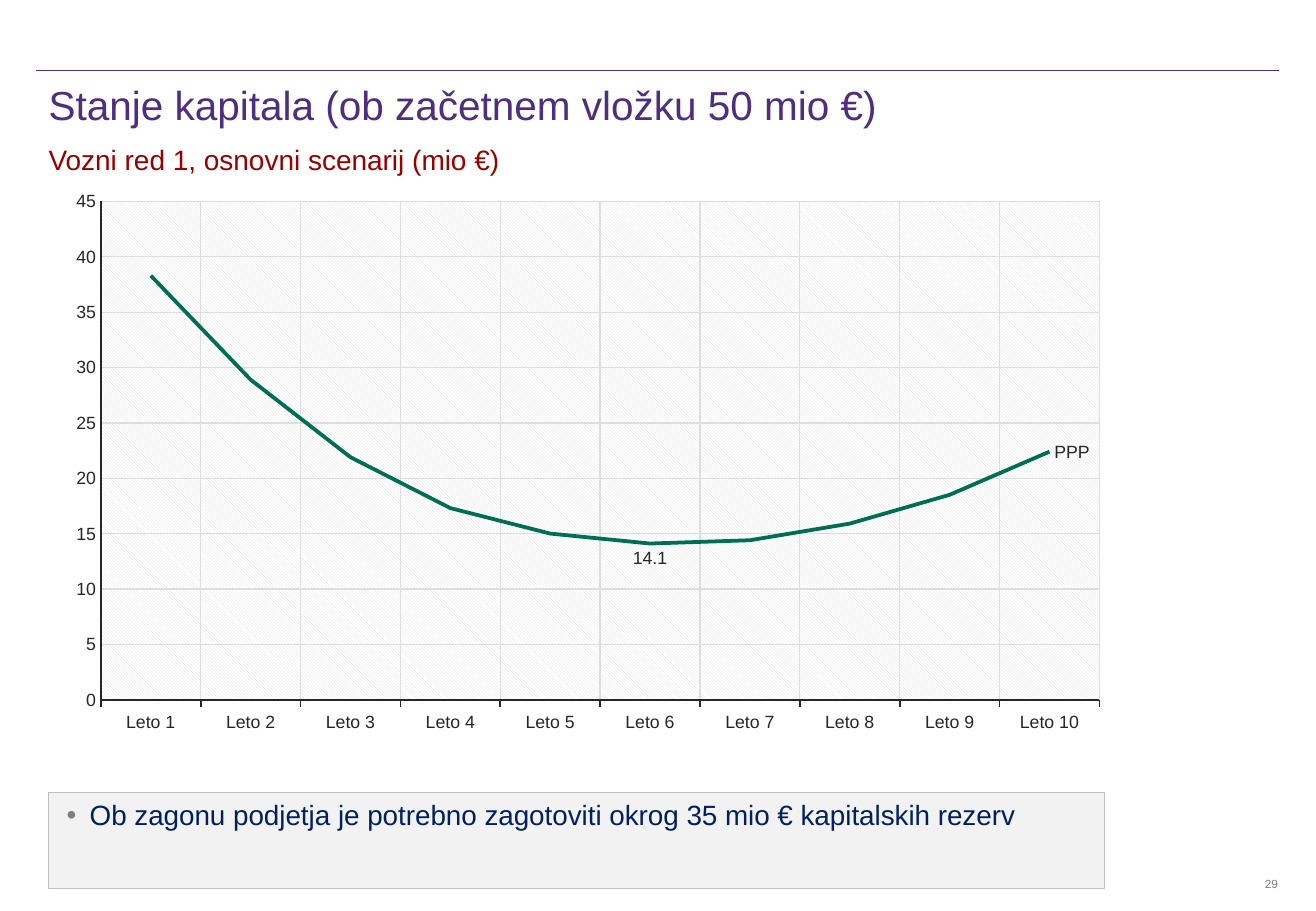
from typing import NamedTuple

from pptx import Presentation
from pptx.chart.axis import _BaseAxis as Axis
from pptx.chart.chart import Chart
from pptx.chart.data import CategoryChartData
from pptx.dml.color import RGBColor
from pptx.dml.line import LineFormat
from pptx.enum.chart import XL_CHART_TYPE as ChartType
from pptx.enum.chart import XL_LABEL_POSITION as LabelPosition
from pptx.enum.chart import XL_TICK_MARK as TickMark
from pptx.enum.shapes import MSO_CONNECTOR as Connector
from pptx.enum.shapes import MSO_SHAPE as Shape
from pptx.enum.text import MSO_ANCHOR as Anchor
from pptx.enum.text import PP_ALIGN as Align
from pptx.oxml import parse_xml
from pptx.oxml.ns import nsdecls, qn
from pptx.slide import Slide
from pptx.text.text import TextFrame, _Paragraph as Paragraph
from pptx.util import Length, Pt

FONT = "Arial"
PURPLE = "4F2D7F"
INK = "262626"
GRID = "DEDEDE"
CAPITAL = [38.3, 28.9, 21.9, 17.3, 15.0, 14.1, 14.4, 15.9, 18.5, 22.4]


class Box(NamedTuple):
    left: float
    top: float
    width: float
    height: float

    def lengths(self) -> list[Length]:
        return [Pt(value) for value in self]


class TextItem(NamedTuple):
    box: Box
    text: str
    size: float
    color: str
    align: Align
    wrap: bool


TITLE_BOX = Box(21.6, 49, 737.3, 28.8)
CHART_BOX = Box(21.6, 113, 636.5, 321.1)
NOTE_BOX = Box(28.8, 469.4, 625.7, 56.9)
PLOT_BOX = Box(0.06, 0.02, 0.93, 0.92)
TEXT_ITEMS = [
    TextItem(Box(28.8, 84.2, 484.6, 20), "Vozni red 1, osnovni scenarij (mio €)",
             16.6, "990000", Align.LEFT, True),
    TextItem(Box(748.8, 519.8, 8.6, 8.6), "29", 7, "7F7F7F", Align.RIGHT, False),
]


def rgb(color: str) -> RGBColor:
    return RGBColor.from_string(color)


def style_line(line: LineFormat, color: str, width: float) -> None:
    line.color.rgb = rgb(color)
    line.width = Pt(width)


def write_text(paragraph: Paragraph, text: str, *, size: float, color: str,
               align: Align = Align.LEFT, spacing: float = 1.0) -> None:
    paragraph.alignment = align
    paragraph.line_spacing = spacing
    run = paragraph.add_run()
    run.text = text
    run.font.name = FONT
    run.font.size = Pt(size)
    run.font.color.rgb = rgb(color)


def clear_margins(frame: TextFrame) -> None:
    frame.margin_left = frame.margin_right = 0
    frame.margin_top = frame.margin_bottom = 0


def add_text(slide: Slide, item: TextItem) -> None:
    frame = slide.shapes.add_textbox(*item.box.lengths()).text_frame
    clear_margins(frame)
    frame.word_wrap = item.wrap
    write_text(frame.paragraphs[0], item.text, size=item.size,
               color=item.color, align=item.align)


def add_header_rule(slide: Slide) -> None:
    rule = slide.shapes.add_connector(
        Connector.STRAIGHT, Pt(21.6), Pt(41.8), Pt(758.2), Pt(41.8))
    style_line(rule.line, PURPLE, 0.25)
    rule._element.spPr.append(parse_xml(f"<a:effectLst {nsdecls('a')}/>"))


def set_title(slide: Slide, text: str) -> None:
    title = slide.shapes.title
    title.left, title.top, title.width, title.height = TITLE_BOX.lengths()
    frame = title.text_frame
    frame.vertical_anchor = Anchor.MIDDLE
    write_text(frame.paragraphs[0], text, size=24, color=PURPLE, spacing=0.9)


def add_bullet(paragraph: Paragraph, color: str) -> None:
    properties = paragraph._p.get_or_add_pPr()
    properties.set("marL", str(Pt(17.3)))
    properties.set("indent", str(Pt(-13.7)))
    for bullet in (
        f'<a:buClr {nsdecls("a")}><a:srgbClr val="{color}"/></a:buClr>',
        f'<a:buFont {nsdecls("a")} typeface="{FONT}"/>',
        f'<a:buChar {nsdecls("a")} char="•"/>',
    ):
        properties.append(parse_xml(bullet))


def add_note(slide: Slide, text: str) -> None:
    note = slide.shapes.add_shape(Shape.RECTANGLE, *NOTE_BOX.lengths())
    note.shadow.inherit = False
    note.fill.solid()
    note.fill.fore_color.rgb = rgb("F2F2F2")
    style_line(note.line, "BFBFBF", 0.25)
    frame = note.text_frame
    frame.word_wrap = True
    frame.vertical_anchor = Anchor.TOP
    add_bullet(frame.paragraphs[0], "808080")
    write_text(frame.paragraphs[0], text, size=16.5, color="002060")


def style_axis(axis: Axis, tick: TickMark) -> None:
    axis.major_tick_mark = tick
    axis.minor_tick_mark = TickMark.NONE
    axis.has_major_gridlines = True
    style_line(axis.major_gridlines.format.line, GRID, 0.75)
    style_line(axis.format.line, INK, 1)


def style_plot_area(chart: Chart) -> None:
    area = chart._chartSpace.chart.plotArea
    for layout in area.findall(qn("c:layout")):
        area.remove(layout)
    places = "".join(f'<c:{tag} val="{value}"/>'
                     for tag, value in zip("xywh", PLOT_BOX))
    area.insert(0, parse_xml(
        f'<c:layout {nsdecls("c")}><c:manualLayout>'
        '<c:layoutTarget val="inner"/><c:xMode val="edge"/><c:yMode val="edge"/>'
        f'{places}</c:manualLayout></c:layout>'))
    area.append(parse_xml(
        f'<c:spPr {nsdecls("c", "a")}><a:pattFill prst="ltDnDiag">'
        f'<a:fgClr><a:srgbClr val="{GRID}"/></a:fgClr>'
        '<a:bgClr><a:srgbClr val="FFFFFF"/></a:bgClr>'
        '</a:pattFill></c:spPr>'))


def label_points(chart: Chart) -> None:
    series = chart.plots[0].series[0]
    series.data_labels.show_value = False
    lowest = CAPITAL.index(min(CAPITAL))
    last = len(CAPITAL) - 1
    series.points[lowest].data_label.position = LabelPosition.BELOW
    series.points[last].data_label.position = LabelPosition.RIGHT
    name_label = series._element.findall(f".//{qn('c:dLbl')}")[-1]
    name_label.find(qn("c:showVal")).set("val", "0")
    name_label.find(qn("c:showSerName")).set("val", "1")


def add_capital_chart(slide: Slide) -> None:
    data = CategoryChartData(number_format="0.0")
    data.categories = [f"Leto {year}" for year in range(1, len(CAPITAL) + 1)]
    data.add_series("PPP", CAPITAL)
    chart = slide.shapes.add_chart(
        ChartType.LINE, *CHART_BOX.lengths(), data).chart
    chart.has_legend = False
    chart.has_title = False
    chart.font.name = FONT
    chart.font.size = Pt(10.5)
    chart.font.color.rgb = rgb(INK)
    chart.plots[0].vary_by_categories = False

    style_axis(chart.category_axis, TickMark.OUTSIDE)
    values = chart.value_axis
    style_axis(values, TickMark.NONE)
    values.minimum_scale, values.maximum_scale, values.major_unit = 0, 45, 5
    values.tick_labels.number_format = "#,##0"
    values.tick_labels.number_format_is_linked = False

    series = chart.plots[0].series[0]
    series.smooth = False
    style_line(series.format.line, "006D55", 2.25)
    label_points(chart)
    style_plot_area(chart)


def main() -> None:
    presentation = Presentation()
    presentation.slide_width, presentation.slide_height = Pt(780), Pt(540)
    slide = presentation.slides.add_slide(
        presentation.slide_layouts.get_by_name("Title Only"))
    add_header_rule(slide)
    set_title(slide, "Stanje kapitala (ob začetnem vložku 50 mio €)")
    for item in TEXT_ITEMS:
        add_text(slide, item)
    add_note(slide, "Ob zagonu podjetja je potrebno zagotoviti okrog "
                    "35 mio € kapitalskih rezerv")
    add_capital_chart(slide)
    presentation.save("out.pptx")


if __name__ == "__main__":
    main()
